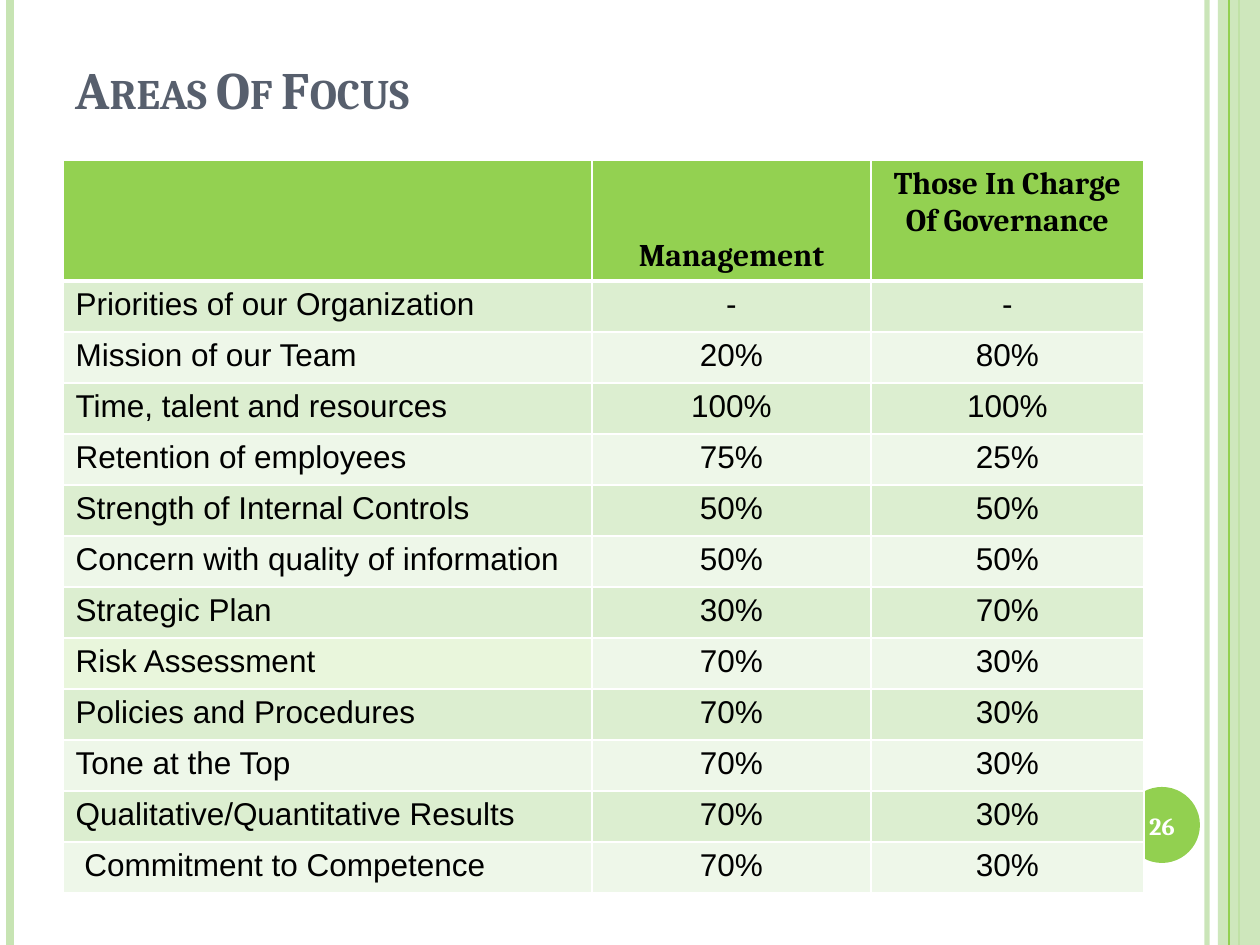
from lxml.etree import SubElement
from pptx import Presentation
from pptx.dml.color import RGBColor
from pptx.enum.shapes import MSO_CONNECTOR, MSO_SHAPE
from pptx.enum.text import MSO_ANCHOR, PP_ALIGN
from pptx.oxml.ns import qn
from pptx.util import Emu, Pt

COLORS = {
    "pale": "C7E4B3", "green": "92D050", "title": "575F6D",
    "header": "93D151", "odd": "DCEED0", "even": "EEF7E9", "risk": "E9F6DC",
    "white": "FFFFFF", "black": "000000",
}
TITLE = "Areas Of Focus"
PAGE_NUMBER = "26"
HEADER = [[], ["Management"], ["Those In Charge", "Of Governance"]]
ROWS = [
    ("Priorities of our Organization", "-", "-"),
    ("Mission of our Team", "20%", "80%"),
    ("Time, talent and resources", "100%", "100%"),
    ("Retention of employees", "75%", "25%"),
    ("Strength of Internal Controls", "50%", "50%"),
    ("Concern with quality of information", "50%", "50%"),
    ("Strategic Plan", "30%", "70%"),
    ("Risk Assessment", "70%", "30%"),
    ("Policies and Procedures", "70%", "30%"),
    ("Tone at the Top", "70%", "30%"),
    ("Qualitative/Quantitative Results", "70%", "30%"),
    (" Commitment to Competence", "70%", "30%"),
]
COL_WIDTHS = [529, 279, 273]
HEADER_HEIGHT, ROW_HEIGHT = 121, 51
TABLE_LEFT, TABLE_TOP = 63, 160
WIDTH, HEIGHT = 1260, 945


def px(n):
    return Emu(n * 914400 // 126)


def rgb(name):
    return RGBColor.from_string(COLORS[name])


def set_alpha(shape, percent):
    """Make the first solid colour of the shape partly transparent."""
    color = next(shape._element.spPr.iter(qn("a:srgbClr")))
    SubElement(color, qn("a:alpha"), val=str(percent * 1000))


def add_rule(s, x, color, points):
    line = s.shapes.add_connector(MSO_CONNECTOR.STRAIGHT, px(x), 0, px(x), px(HEIGHT))
    line.line.color.rgb = rgb(color)
    line.line.width = Pt(points)
    SubElement(line._element.spPr, qn("a:effectLst"))
    return line


def add_filled(s, kind, box, color):
    sp = s.shapes.add_shape(kind, *map(px, box))
    sp.shadow.inherit = False
    sp.fill.solid()
    sp.fill.fore_color.rgb = rgb(color)
    sp.line.fill.background()
    return sp


def write(p, text, size, font, color, bold, align=PP_ALIGN.LEFT):
    p.alignment = align
    r = p.add_run()
    r.text = text
    r.font.size = Pt(size)
    r.font.name = font
    r.font.bold = bold
    r.font.color.rgb = rgb(color)
    return r


def add_text(s, box, anchor, *style):
    tf = s.shapes.add_textbox(*map(px, box)).text_frame
    tf.word_wrap = True
    tf.vertical_anchor = anchor
    return write(tf.paragraphs[0], *style)


def style_cell(cell, color, top=1, bottom=1):
    """Set white borders, in points, and then the fill."""
    tc_pr = cell._tc.get_or_add_tcPr()
    for side, points in (("L", 1), ("R", 1), ("T", top), ("B", bottom)):
        ln = SubElement(tc_pr, qn(f"a:ln{side}"), w=str(Pt(points)))
        SubElement(SubElement(ln, qn("a:solidFill")), qn("a:srgbClr"), val=COLORS["white"])
    cell.fill.solid()
    cell.fill.fore_color.rgb = rgb(color)


def add_focus_table(s):
    height = HEADER_HEIGHT + ROW_HEIGHT * len(ROWS)
    table = s.shapes.add_table(
        len(ROWS) + 1, len(COL_WIDTHS), px(TABLE_LEFT), px(TABLE_TOP),
        px(sum(COL_WIDTHS)), px(height)).table
    for column, width in zip(table.columns, COL_WIDTHS):
        column.width = px(width)
    for i, row in enumerate(table.rows):
        row.height = px(ROW_HEIGHT if i else HEADER_HEIGHT)

    for c, lines in enumerate(HEADER):
        cell = table.cell(0, c)
        style_cell(cell, "header", bottom=3)
        cell.vertical_anchor = MSO_ANCHOR.BOTTOM if c == 1 else MSO_ANCHOR.TOP
        tf = cell.text_frame
        for i, text in enumerate(lines):
            p = tf.add_paragraph() if i else tf.paragraphs[0]
            write(p, text, 18, "Cambria", "black", True, PP_ALIGN.CENTER)

    for i, values in enumerate(ROWS, 1):
        for c, text in enumerate(values):
            cell = table.cell(i, c)
            band = "odd" if i % 2 else "even"
            color = "risk" if text == "Risk Assessment" else band
            style_cell(cell, color, top=3 if i == 1 else 1)
            write(cell.text_frame.paragraphs[0], text, 18, "Arial", "black", False,
                  PP_ALIGN.CENTER if c else PP_ALIGN.LEFT)


def main():
    prs = Presentation()
    prs.slide_width, prs.slide_height = px(WIDTH), px(HEIGHT)
    s = prs.slides.add_slide(prs.slide_layouts[6])

    set_alpha(add_rule(s, 1207, "pale", 3), 93)
    add_rule(s, 10, "pale", 4.5)
    add_rule(s, 1239, "green", 1.5)
    set_alpha(add_filled(s, MSO_SHAPE.RECTANGLE, (1218, 0, 42, HEIGHT), "pale"), 87)
    add_rule(s, 1229, "green", 0.75)
    add_filled(s, MSO_SHAPE.OVAL, (1124, 787, 76, 76), "green")

    title = add_text(s, (63, 38, 1029, 88), MSO_ANCHOR.BOTTOM,
                     TITLE, 30, "Cambria", "title", True)
    title.font._element.set("cap", "small")
    add_focus_table(s)
    add_text(s, (1120, 790, 84, 72), MSO_ANCHOR.MIDDLE,
             PAGE_NUMBER, 14, "Cambria", "white", True, PP_ALIGN.CENTER)
    prs.save("out.pptx")


if __name__ == "__main__":
    main()
